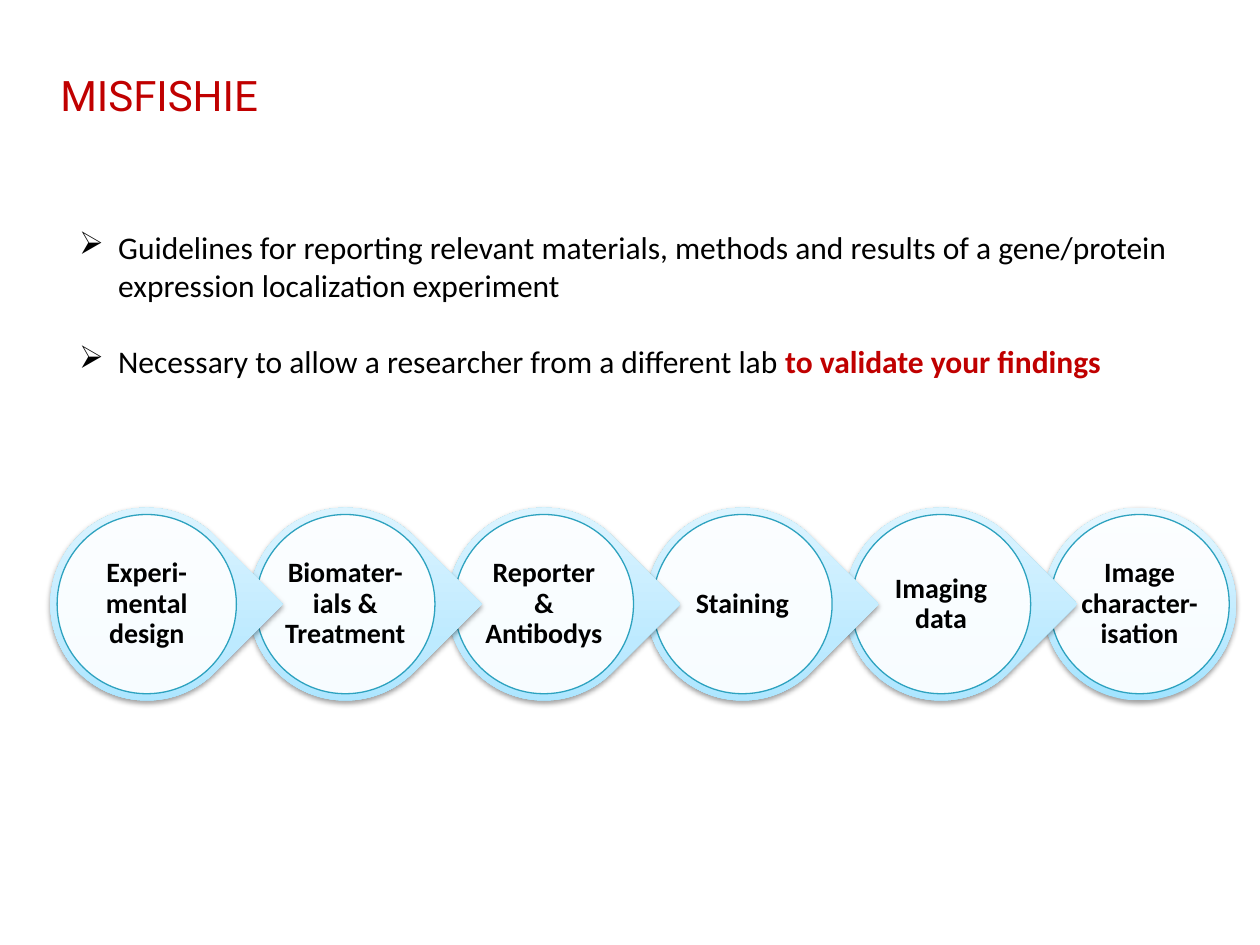
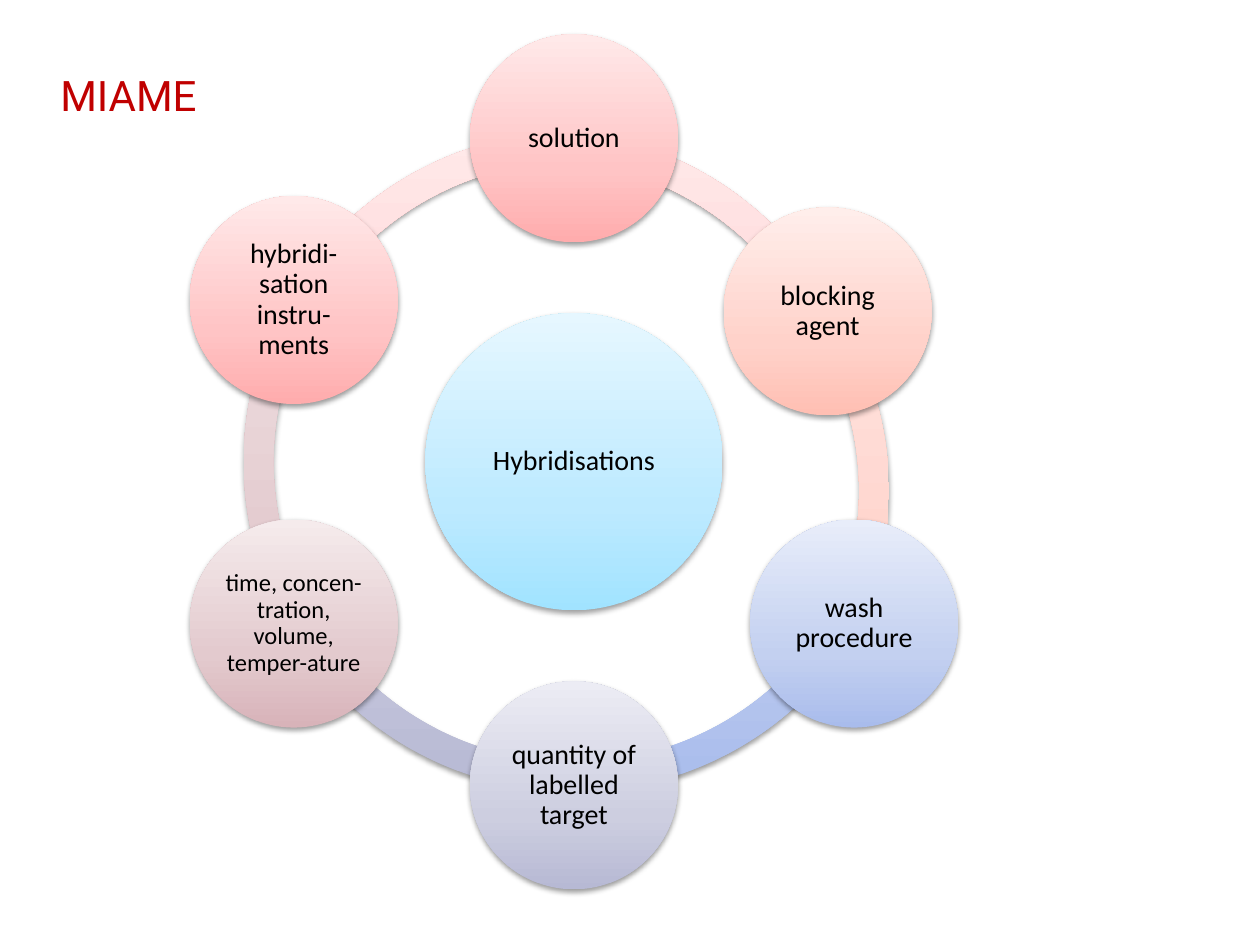
import math
from collections import namedtuple

from lxml import etree
from pptx import Presentation
from pptx.dml.color import RGBColor
from pptx.enum.shapes import MSO_SHAPE
from pptx.enum.text import MSO_ANCHOR, PP_ALIGN
from pptx.oxml import parse_xml
from pptx.oxml.ns import nsdecls, qn
from pptx.util import Inches, Pt

ELLIPSE, TEARDROP, BLOCK_ARC = MSO_SHAPE.OVAL, MSO_SHAPE.TEAR, MSO_SHAPE.BLOCK_ARC
CENTER, MIDDLE = PP_ALIGN.CENTER, MSO_ANCHOR.MIDDLE

SLIDE_WIDTH, SLIDE_HEIGHT = Inches(10), Inches(7.5)
UNIT = SLIDE_WIDTH // 100  # square grid: 100 columns by 75 rows

BLACK = RGBColor(0x00, 0x00, 0x00)
WHITE = RGBColor(0xFF, 0xFF, 0xFF)
RED = RGBColor(0xC0, 0x00, 0x00)
TEAL = RGBColor(0x2D, 0xA2, 0xBF)

# Gradients from the bottom of a shape to its top
GRADIENT_STOPS = (0, 35, 100)
SKY = (RGBColor(0xA1, 0xE3, 0xFF), RGBColor(0xBD, 0xEA, 0xFF), RGBColor(0xE6, 0xF7, 0xFF))
ROSE = (RGBColor(0xFF, 0xAC, 0xAD), RGBColor(0xFF, 0xC4, 0xC5), RGBColor(0xFF, 0xE9, 0xE9))
SALMON = (RGBColor(0xFF, 0xBF, 0xB3), RGBColor(0xFF, 0xD2, 0xCA), RGBColor(0xFF, 0xEE, 0xEB))
BLUE = (RGBColor(0xA9, 0xBC, 0xEC), RGBColor(0xC3, 0xD0, 0xF0), RGBColor(0xE8, 0xED, 0xFA))
LAVENDER = (RGBColor(0xB7, 0xB9, 0xD4), RGBColor(0xCD, 0xCE, 0xE0), RGBColor(0xEC, 0xEC, 0xF4))
MAUVE = (RGBColor(0xD8, 0xB3, 0xB9), RGBColor(0xE3, 0xCA, 0xCE), RGBColor(0xF5, 0xEB, 0xEC))

TITLE_FONT = {"name": "Roboto", "size": Pt(24), "color": RED}
BODY_FONT = {"name": "Calibri", "size": Pt(18), "color": BLACK}
EMPHASIS_FONT = BODY_FONT | {"color": RED, "bold": True}
LABEL_FONT = {"name": "Calibri", "size": Pt(16), "color": BLACK}
SMALL_LABEL_FONT = LABEL_FONT | {"size": Pt(14)}
STEP_FONT = LABEL_FONT | {"bold": True}

Box = namedtuple("Box", "left top width height")
Node = namedtuple("Node", "label colors font shift", defaults=(LABEL_FONT, (0, 0)))
Arc = namedtuple("Arc", "start end colors shift", defaults=((0, 0),))

TITLE_BOX = Box(3.8, 5.5, 81.2, 8.1)
GUIDELINES_BOX = Box(5.3, 17.6, 90.9, 13.1)
STEPS_BOX = Box(4, 40.3, 94.1, 15.3)
RING_BOX = Box(19.35, 10.45, 52.4, 52.4)

GUIDELINES = [
    [("Guidelines for reporting relevant materials, methods and results of a "
      "gene/protein expression localization experiment", BODY_FONT)],
    [("Necessary to allow a researcher from a different lab ", BODY_FONT),
     ("to validate your findings", EMPHASIS_FONT)],
]
STEPS = ["Experi-mental design", "Biomater-ials & Treatment", "Reporter & Antibodys",
         "Staining", "Imaging data", "Image character-isation"]

# Clockwise from the top
NODES = [
    Node("solution", ROSE),
    Node("blocking agent", SALMON, shift=(-2.1, 0.9)),
    Node("wash procedure", BLUE),
    Node("quantity of labelled target", LAVENDER),
    Node("time, concen-tration, volume, temper-ature", MAUVE, SMALL_LABEL_FONT),
    Node("hybridi-sation instru-ments", ROSE),
]
# Degrees clockwise from the right
ARCS = [
    Arc(210, 270, ROSE),
    Arc(150, 210, MAUVE),
    Arc(90, 150, LAVENDER),
    Arc(30, 90, BLUE),
    Arc(326.1, 24.25, SALMON, (-1.2, 2.3)),
    Arc(275.85, 332.41, ROSE, (-2.6, -0.1)),
]


def scaled(box):
    return [round(length * UNIT) for length in box]


def circle_box(center_x, center_y, diameter):
    return Box(center_x - diameter / 2, center_y - diameter / 2, diameter, diameter)


def set_font(font, style):
    for name, value in style.items():
        if name == "color":
            font.color.rgb = value
        else:
            setattr(font, name, value)


def add_run(paragraph, text, style):
    run = paragraph.add_run()
    run.text = text
    set_font(run.font, style)


def add_shape(slide, kind, box):
    shape = slide.shapes.add_shape(kind, *scaled(box))
    shape.shadow.inherit = False
    shape.line.fill.background()
    return shape


def add_glossy_shape(slide, kind, box, colors):
    """Add a shape with a vertical gradient and a soft shadow below it."""
    shape = add_shape(slide, kind, box)
    stops = "".join(
        f'<a:gs pos="{position * 1000}"><a:srgbClr val="{color}"/></a:gs>'
        for position, color in zip(GRADIENT_STOPS, colors))
    gradient = parse_xml(
        f'<a:gradFill {nsdecls("a")} rotWithShape="0"><a:gsLst>{stops}</a:gsLst>'
        '<a:lin ang="16200000" scaled="0"/></a:gradFill>')
    shadow = parse_xml(
        f'<a:outerShdw {nsdecls("a")} blurRad="40000" dist="20000" dir="5400000" '
        'rotWithShape="0"><a:srgbClr val="000000"><a:alpha val="38000"/></a:srgbClr>'
        '</a:outerShdw>')
    properties = shape.element.spPr
    properties.find(qn("a:prstGeom")).addnext(gradient)
    properties.find(qn("a:effectLst")).append(shadow)
    return shape


def add_label(shape, text, style):
    frame = shape.text_frame
    frame.word_wrap = True
    frame.vertical_anchor = MIDDLE
    for side in ("left", "right", "top", "bottom"):
        setattr(frame, f"margin_{side}", Inches(0.01))
    paragraph = frame.paragraphs[0]
    paragraph.alignment = CENTER
    paragraph.line_spacing = 0.9
    add_run(paragraph, text, style)


def add_title(slide, box, text):
    frame = slide.shapes.add_textbox(*scaled(box)).text_frame
    frame.word_wrap = True
    frame.margin_top = frame.margin_bottom = 0
    add_run(frame.paragraphs[0], text, TITLE_FONT)


def add_bullets(slide, box, bullets):
    frame = slide.shapes.add_textbox(*scaled(box)).text_frame
    frame.word_wrap = True
    for index, runs in enumerate(bullets):
        paragraph = frame.add_paragraph() if index else frame.paragraphs[0]
        properties = paragraph._p.get_or_add_pPr()
        indent = Inches(0.31)
        properties.set("marL", str(indent))
        properties.set("indent", str(-indent))
        etree.SubElement(properties, qn("a:buChar")).set("char", "➢")
        if index:
            paragraph.space_before = Pt(22)
        for text, style in runs:
            add_run(paragraph, text, style)


def add_step_chain(slide, box, steps):
    """Place drops from right to left so that each tip covers the next step."""
    size = box.height
    pitch = (box.width - size) / (len(steps) - 1)
    last = len(steps) - 1
    for index in range(last, -1, -1):
        outer = Box(box.left + index * pitch, box.top, size, size)
        drop = add_glossy_shape(slide, ELLIPSE if index == last else TEARDROP, outer, SKY)
        if index < last:
            drop.adjustments[0] = 1
            drop.rotation = 45
        disc = add_shape(slide, ELLIPSE, circle_box(
            outer.left + size / 2, outer.top + size / 2, size * 0.93))
        disc.fill.solid()
        disc.fill.fore_color.rgb = WHITE
        color = disc.element.spPr.find(qn("a:solidFill"))[0]
        etree.SubElement(color, qn("a:alpha")).set("val", "90000")
        disc.line.color.rgb = TEAL
        disc.line.width = Pt(0.75)
        add_label(disc, steps[index], STEP_FONT)


def add_ring(slide, box, hub_label, nodes, arcs):
    for arc in arcs:
        moved = box._replace(left=box.left + arc.shift[0], top=box.top + arc.shift[1])
        shape = add_glossy_shape(slide, BLOCK_ARC, moved, arc.colors)
        # Angles are stored in 60000ths of a degree, adjustments in 100000ths
        shape.adjustments[0] = arc.start * 0.6
        shape.adjustments[1] = arc.end * 0.6
        shape.adjustments[2] = 0.045

    center_x, center_y = box.left + box.width / 2, box.top + box.height / 2
    hub = add_glossy_shape(
        slide, ELLIPSE, circle_box(center_x, center_y, box.width * 0.45), SKY)
    add_label(hub, hub_label, LABEL_FONT)

    radius = box.width * 0.49
    for index, node in enumerate(nodes):
        angle = 2 * math.pi * index / len(nodes)
        x = center_x + radius * math.sin(angle) + node.shift[0]
        y = center_y - radius * math.cos(angle) + node.shift[1]
        circle = add_glossy_shape(
            slide, ELLIPSE, circle_box(x, y, box.width * 0.315), node.colors)
        add_label(circle, node.label, node.font)


def add_slide(presentation, title):
    slide = presentation.slides.add_slide(presentation.slide_layouts[6])
    add_title(slide, TITLE_BOX, title)
    return slide


def main():
    presentation = Presentation()
    presentation.slide_width, presentation.slide_height = SLIDE_WIDTH, SLIDE_HEIGHT

    slide = add_slide(presentation, "MISFISHIE")
    add_step_chain(slide, STEPS_BOX, STEPS)
    add_bullets(slide, GUIDELINES_BOX, GUIDELINES)

    slide = add_slide(presentation, "MIAME")
    add_ring(slide, RING_BOX, "Hybridisations", NODES, ARCS)

    presentation.save("out.pptx")


if __name__ == "__main__":
    main()
